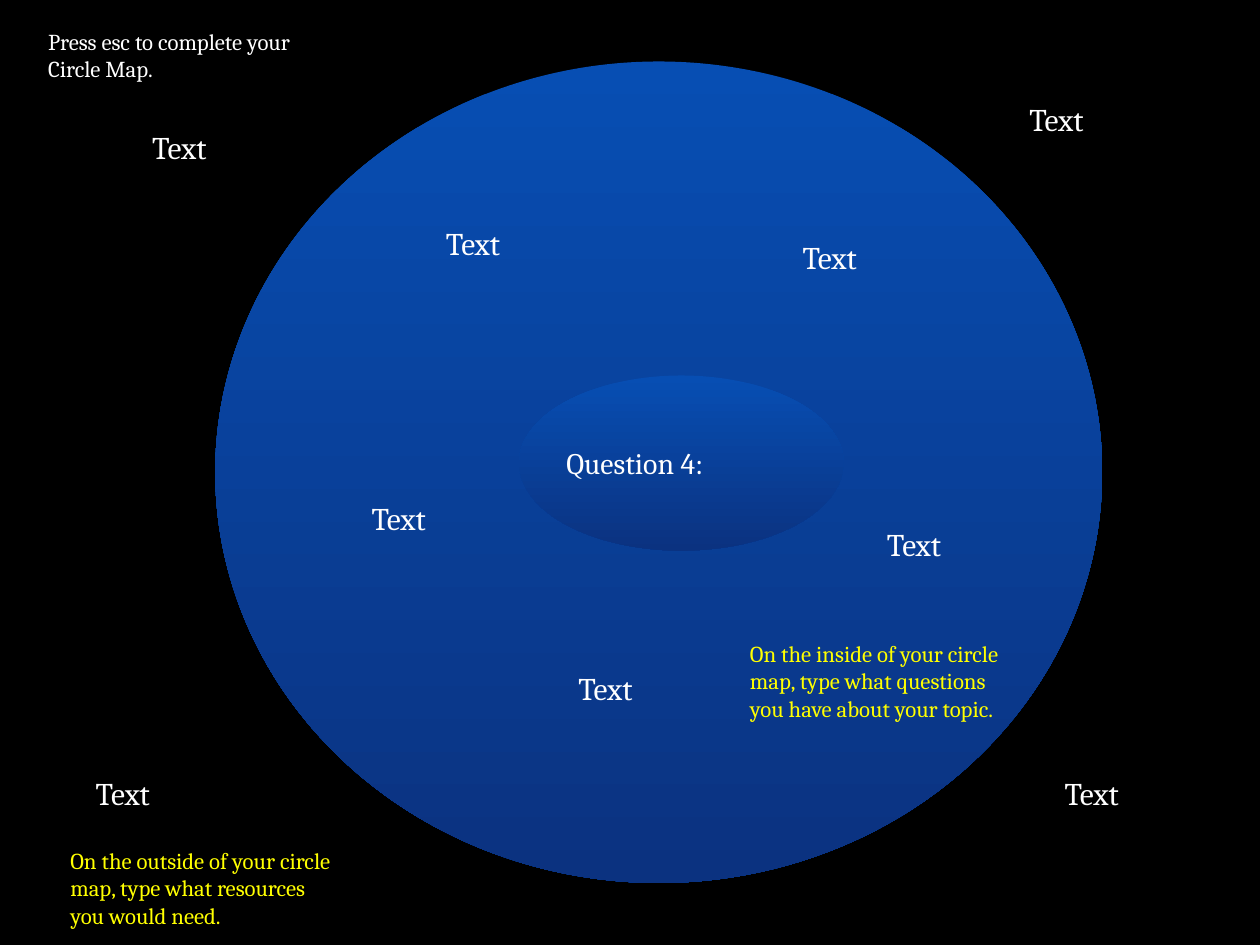
from pptx import Presentation
from pptx.dml.color import RGBColor
from pptx.enum.shapes import MSO_SHAPE
from pptx.enum.text import MSO_ANCHOR, MSO_AUTO_SIZE, PP_ALIGN
from pptx.util import Cm, Pt

BLACK = RGBColor(0x00, 0x00, 0x00)
WHITE = RGBColor(0xFF, 0xFF, 0xFF)
YELLOW = RGBColor(0xFF, 0xFF, 0x00)
BLUE_TOP = RGBColor(0x07, 0x4E, 0xB3)
BLUE_BOTTOM = RGBColor(0x0B, 0x32, 0x80)

OUTER_CIRCLE = (4.34, 1.24, 17.88, 16.56)
INNER_CIRCLE = (10.46, 7.57, 6.55, 3.53)
TOPIC = "Question 4:"

LABEL = "Text"
LABEL_SIZE = (1.24, 0.76)
INSIDE_LABELS = [(8.99, 4.52), (16.18, 4.8), (17.88, 10.59), (7.49, 10.06), (11.66, 13.49)]
OUTSIDE_LABELS = [(3.07, 2.59), (1.93, 15.6), (20.75, 2.01), (21.46, 15.6)]

HINT_WIDTH = 5.82
HINTS = [
    ("Press esc to complete your Circle Map.", (0.79, 0.46), 1.3, WHITE),
    ("On the outside of your circle map, type what resources you would need.",
     (1.24, 16.97), 2.41, YELLOW),
    ("On the inside of your circle map, type what questions you have about your topic.",
     (14.94, 12.8), 2.41, YELLOW),
]


def frame_format(horizontal, vertical, **extra):
    return {
        "margin_left": Cm(horizontal), "margin_right": Cm(horizontal),
        "margin_top": Cm(vertical), "margin_bottom": Cm(vertical), **extra,
    }


TOPIC_FORMAT = frame_format(0, 0, vertical_anchor=MSO_ANCHOR.MIDDLE, word_wrap=True)
LABEL_FORMAT = frame_format(0, 0, vertical_anchor=MSO_ANCHOR.MIDDLE, word_wrap=False,
                            auto_size=MSO_AUTO_SIZE.SHAPE_TO_FIT_TEXT)
HINT_FORMAT = frame_format(0.18, 0.1, vertical_anchor=MSO_ANCHOR.TOP, word_wrap=True,
                           auto_size=MSO_AUTO_SIZE.SHAPE_TO_FIT_TEXT)


def write(holder, wording, size, color, formats):
    frame = holder.text_frame
    for name, value in formats.items():
        setattr(frame, name, value)
    paragraph = frame.paragraphs[0]
    paragraph.alignment = PP_ALIGN.LEFT
    run = paragraph.add_run()
    run.text = wording
    run.font.name = "Cambria"
    run.font.size = Pt(size)
    run.font.color.rgb = color


def add_circle(slide, box):
    circle = slide.shapes.add_shape(MSO_SHAPE.OVAL, *map(Cm, box))
    circle.shadow.inherit = False
    circle.line.fill.background()
    circle.fill.gradient()
    circle.fill.gradient_angle = 270
    for stop, color in zip(circle.fill.gradient_stops, (BLUE_TOP, BLUE_BOTTOM)):
        stop.color.rgb = color
    return circle


def add_note(slide, wording, box, size, color, formats):
    note = slide.shapes.add_textbox(*map(Cm, box))
    write(note, wording, size, color, formats)


def main():
    deck = Presentation()
    deck.slide_width, deck.slide_height = Cm(25.4), Cm(19.05)
    slide = deck.slides.add_slide(deck.slide_layouts[6])
    slide.background.fill.solid()
    slide.background.fill.fore_color.rgb = BLACK

    add_circle(slide, OUTER_CIRCLE)
    write(add_circle(slide, INNER_CIRCLE), TOPIC, 17, WHITE, TOPIC_FORMAT)
    for corner in INSIDE_LABELS + OUTSIDE_LABELS:
        add_note(slide, LABEL, corner + LABEL_SIZE, 18, WHITE, LABEL_FORMAT)
    for wording, corner, height, color in HINTS:
        add_note(slide, wording, corner + (HINT_WIDTH, height), 13, color, HINT_FORMAT)

    deck.save("out.pptx")


if __name__ == "__main__":
    main()
